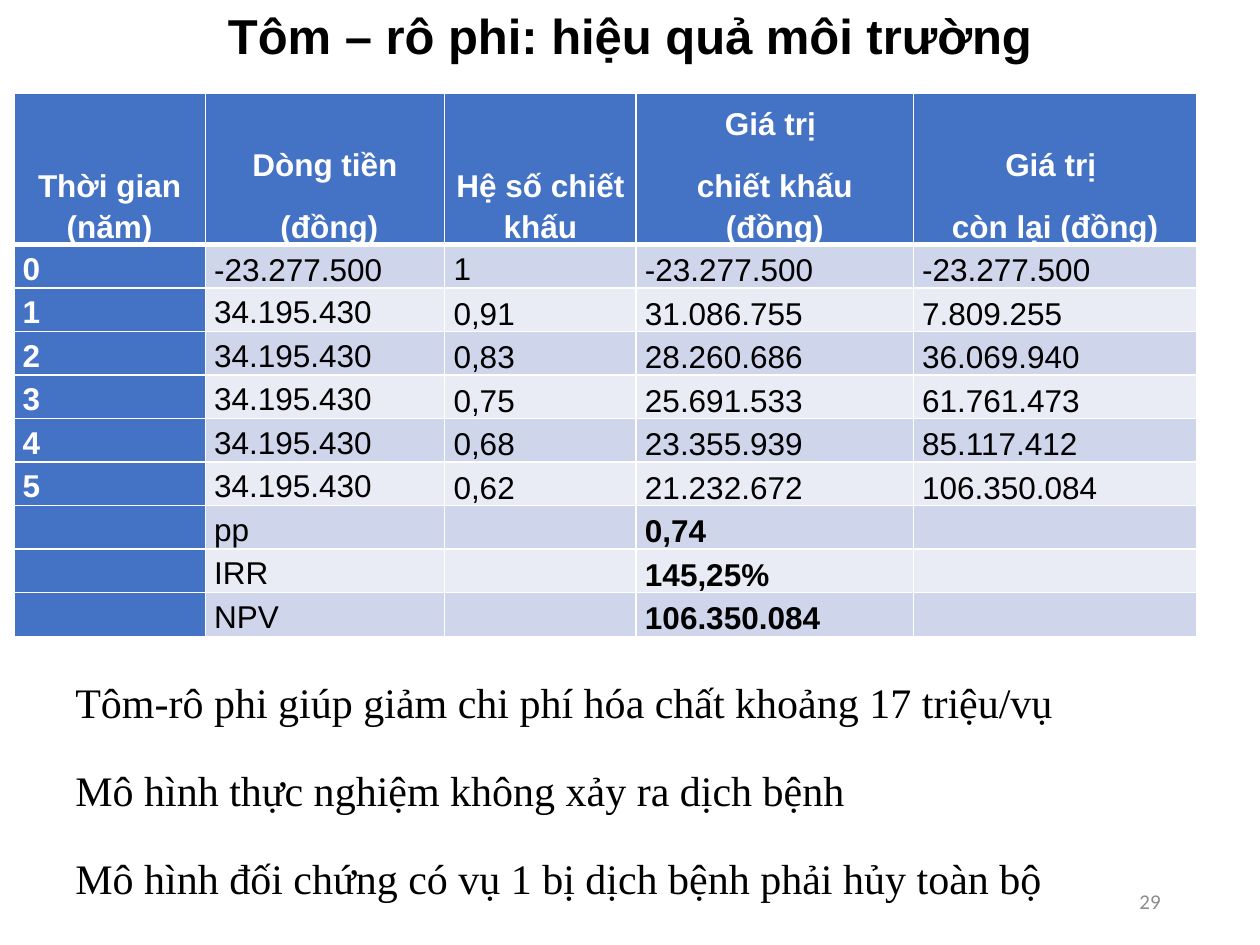
import pptx
import pptx.util
import pptx.dml.color
import pptx.enum.text
import pptx.oxml
import pptx.oxml.ns

Inches, Pt = pptx.util.Inches, pptx.util.Pt
ALIGN, ANCHOR = pptx.enum.text.PP_ALIGN, pptx.enum.text.MSO_ANCHOR

# Content
TITLE = "Tôm – rô phi: hiệu quả môi trường"
HEADERS = [
    ["Thời gian (năm)"],
    ["Dòng tiền", " (đồng)"],
    ["Hệ số chiết khấu"],
    ["Giá trị ", "chiết khấu (đồng)"],
    ["Giá trị ", "còn lại (đồng)"],
]
CASH_FLOWS = [
    ("0", "-23.277.500", "1", "-23.277.500", "-23.277.500"),
    ("1", "34.195.430", "0,91", "31.086.755", "7.809.255"),
    ("2", "34.195.430", "0,83", "28.260.686", "36.069.940"),
    ("3", "34.195.430", "0,75", "25.691.533", "61.761.473"),
    ("4", "34.195.430", "0,68", "23.355.939", "85.117.412"),
    ("5", "34.195.430", "0,62", "21.232.672", "106.350.084"),
]
INDICATORS = [("pp", "0,74"), ("IRR", "145,25%"), ("NPV", "106.350.084")]
CONCLUSIONS = [
    "Tôm-rô phi giúp giảm chi phí hóa chất khoảng 17 triệu/vụ",
    "Mô hình thực nghiệm không xảy ra dịch bệnh",
    "Mô hình đối chứng có vụ 1 bị dịch bệnh phải hủy toàn bộ",
]
PAGE_NUMBER = "29"

# Style
COLORS = {"header": "4472C4", "odd": "CFD5EA", "even": "E9EBF5",
          "white": "FFFFFF", "black": "000000", "gray": "8C8C8C"}
COLUMN_WIDTHS = [1.52, 1.9, 1.52, 2.2, 2.25]
HEADER_HEIGHT, ROW_HEIGHT = 1.13, 0.32


def rgb(name):
    return pptx.dml.color.RGBColor.from_string(COLORS[name])


def write(frame, lines, size, font, color, bold=False, align=None,
          spacing=None, gap=None, indent=None):
    for i, line in enumerate(lines):
        paragraph = frame.paragraphs[0] if i == 0 else frame.add_paragraph()
        paragraph.alignment = align
        paragraph.line_spacing = spacing
        if gap is not None:
            paragraph.space_before = paragraph.space_after = Pt(gap)
        if indent is not None:
            paragraph_props = paragraph._p.get_or_add_pPr()
            paragraph_props.set("marL", "0")
            paragraph_props.set("indent", str(Inches(indent)))
        if line:
            run = paragraph.add_run()
            run.text = line
            run.font.size, run.font.name, run.font.bold = Pt(size), font, bold
            run.font.color.rgb = rgb(color)


def add_text(slide, box, lines, anchor=ANCHOR.TOP, **style):
    frame = slide.shapes.add_textbox(*map(Inches, box)).text_frame
    frame.word_wrap = True
    frame.vertical_anchor = anchor
    write(frame, lines, **style)


def add_borders(cell, bottom_width):
    cell_props = cell._tc.get_or_add_tcPr()
    widths = {"lnL": 1, "lnR": 1, "lnT": 1, "lnB": bottom_width}
    for i, (side, width) in enumerate(widths.items()):
        cell_props.insert(i, pptx.oxml.parse_xml(
            f'<a:{side} {pptx.oxml.ns.nsdecls("a")} w="{Pt(width)}"><a:solidFill>'
            f'<a:srgbClr val="{COLORS["white"]}"/></a:solidFill></a:{side}>'))


def add_cash_table(slide):
    body = CASH_FLOWS + [("", name, "", value, "") for name, value in INDICATORS]
    rows = [HEADERS] + [[[text] for text in row] for row in body]
    height = HEADER_HEIGHT + ROW_HEIGHT * len(body)
    table = slide.shapes.add_table(
        len(rows), len(HEADERS), Inches(0.11), Inches(0.74),
        Inches(sum(COLUMN_WIDTHS)), Inches(height)).table
    for column, width in zip(table.columns, COLUMN_WIDTHS):
        column.width = Inches(width)

    for r, row in enumerate(rows):
        table.rows[r].height = Inches(ROW_HEIGHT if r else HEADER_HEIGHT)
        for c, lines in enumerate(row):
            cell = table.cell(r, c)
            is_heading = r == 0 or c == 0
            is_result = r > len(CASH_FLOWS) and c == 3
            in_middle = r > 0 and (c < 2 or (r, c) == (1, 2)) and (r, c) != (1, 1)
            cell.margin_left = cell.margin_right = Inches(0.07)
            cell.margin_top = cell.margin_bottom = 0
            cell.vertical_anchor = ANCHOR.MIDDLE if in_middle else ANCHOR.BOTTOM
            cell.fill.solid()
            cell.fill.fore_color.rgb = rgb(
                "header" if is_heading else "odd" if r % 2 else "even")
            add_borders(cell, 1 if r else 3)
            write(cell.text_frame, lines, 18, "Arial",
                  "white" if is_heading else "black", is_heading or is_result,
                  ALIGN.JUSTIFY if r else ALIGN.CENTER, spacing=1.15, gap=6)


def main():
    deck = pptx.Presentation()
    deck.slide_width, deck.slide_height = Inches(10), Inches(7.5)
    slide = deck.slides.add_slide(deck.slide_layouts[6])

    # Title
    add_text(slide, (0.69, 0, 8.62, 0.62), [TITLE], ANCHOR.MIDDLE, size=28,
             font="Arial", color="black", bold=True, align=ALIGN.CENTER, spacing=0.9)
    # Cash flow table
    add_cash_table(slide)
    # Conclusions
    add_text(slide, (0, 5.16, 10, 2.08), CONCLUSIONS, size=24,
             font="Times New Roman", color="black", align=ALIGN.JUSTIFY,
             spacing=1.4, gap=5, indent=0.5)
    # Page number
    add_text(slide, (7.06, 6.95, 2.25, 0.4), [PAGE_NUMBER], ANCHOR.MIDDLE,
             size=12, font="Calibri", color="gray", align=ALIGN.RIGHT)
    deck.save("out.pptx")


if __name__ == "__main__":
    main()
